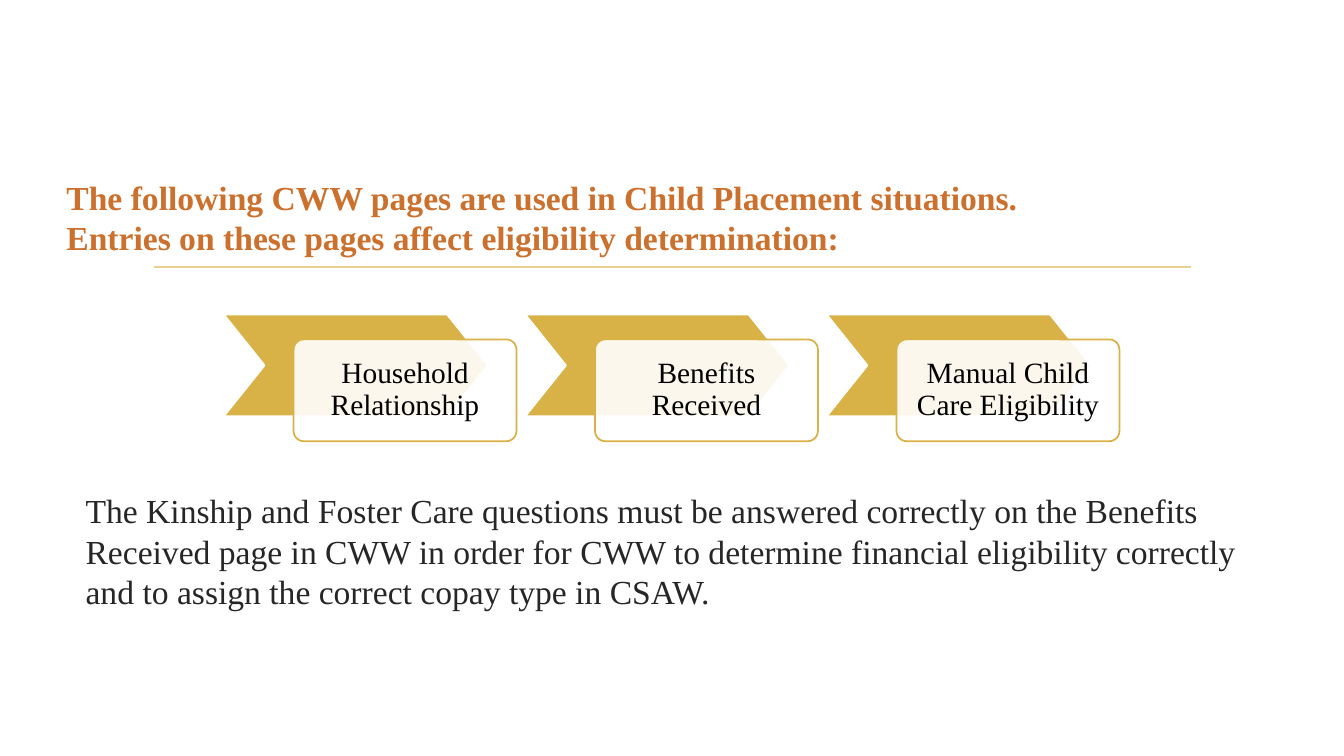
import pptx
import pptx.dml.color
import pptx.enum.shapes
import pptx.enum.text
import pptx.oxml
import pptx.oxml.ns
import pptx.util

PRESETS = pptx.enum.shapes.MSO_SHAPE
ALIGN = pptx.enum.text.PP_ALIGN
ANCHOR = pptx.enum.text.MSO_ANCHOR


def colour(hex_string):
    return pptx.dml.color.RGBColor.from_string(hex_string)


class PlacementSlide:
    font = "Times New Roman"
    gold = "D9B247"
    pale_gold = "E8D191"
    orange = "CC702D"
    white = "FFFFFF"
    black = "000000"
    charcoal = "262626"
    line_width = pptx.util.Pt(1.25)
    columns = 100
    rows = 100

    def __init__(self, deck):
        self.deck = deck
        self.slide = deck.slides.add_slide(deck.slide_layouts[6])

    def place(self, column, row):
        return (round(self.deck.slide_width * column / self.columns),
                round(self.deck.slide_height * row / self.rows))

    def rule(self, start, end, row):
        rule = self.slide.shapes.add_connector(
            pptx.enum.shapes.MSO_CONNECTOR.STRAIGHT,
            *self.place(start, row), *self.place(end, row))
        rule.line.color.rgb = colour(self.pale_gold)
        rule.line.width = self.line_width
        properties = rule._element.spPr
        properties.append(pptx.oxml.parse_xml(
            "<a:effectLst %s/>" % pptx.oxml.ns.nsdecls("a")))

    def panel(self, preset, column, row, width, height, corner, fill, outline, opacity=100):
        panel = self.slide.shapes.add_shape(
            preset, *self.place(column, row), *self.place(width, height))
        panel.shadow.inherit = False
        panel.adjustments[0] = corner
        panel.fill.solid()
        panel.fill.fore_color.rgb = colour(fill)
        panel.line.color.rgb = colour(outline)
        panel.line.width = self.line_width
        if opacity < 100:
            tint = panel._element.spPr.find(".//" + pptx.oxml.ns.qn("a:srgbClr"))
            tint.append(pptx.oxml.parse_xml('<a:alpha %s val="%d"/>' % (
                pptx.oxml.ns.nsdecls("a"), opacity * 1000)))
        return panel

    def fill_text(self, frame, lines, size, ink, bold=False, align=ALIGN.LEFT,
                  anchor=ANCHOR.MIDDLE, spacing=None):
        frame.word_wrap = True
        frame.vertical_anchor = anchor
        paragraph = frame.paragraphs[0]
        paragraph.alignment = align
        paragraph.line_spacing = spacing
        for index, line in enumerate(lines):
            if index:
                paragraph.add_line_break()
            run = paragraph.add_run()
            run.text = line
            run.font.name = self.font
            run.font.size = pptx.util.Pt(size)
            run.font.bold = bold
            run.font.color.rgb = colour(ink)

    def text(self, column, row, width, height, lines, size, ink, **style):
        box = self.slide.shapes.add_textbox(
            *self.place(column, row), *self.place(width, height))
        self.fill_text(box.text_frame, lines, size, ink, **style)

    def step(self, column, row, label):
        self.panel(PRESETS.CHEVRON, column, row, 19.65, 13.47, 0.4,
                   self.gold, self.white)
        card = self.panel(PRESETS.ROUNDED_RECTANGLE, column + 5.2, row + 3.3,
                          16.58, 13.47, 0.1, self.white, self.gold, opacity=90)
        frame = card.text_frame
        frame.margin_left = frame.margin_right = pptx.util.Inches(0.16)
        frame.margin_top = frame.margin_bottom = pptx.util.Inches(0.16)
        self.fill_text(frame, [label], 21, self.black, align=ALIGN.CENTER, spacing=0.9)


def main():
    deck = pptx.Presentation()
    deck.slide_width = pptx.util.Inches(13.33)
    deck.slide_height = pptx.util.Inches(7.5)
    page = PlacementSlide(deck)

    page.rule(11.48, 88.6, 35.33)
    pages = ["Household Relationship", "Benefits Received", "Manual Child Care Eligibility"]
    for index, label in enumerate(pages):
        page.step(16.65 + 22.43 * index, 41.6, label)

    page.text(4.2, 22, 90.25, 13.33, [
        "The following CWW pages are used in Child Placement situations.",
        "Entries on these pages affect eligibility determination:",
    ], 24, page.orange, bold=True)
    page.text(5.63, 64.2, 88.75, 26.5, [
        "The Kinship and Foster Care questions must be answered correctly on the "
        "Benefits Received page in CWW in order for CWW to determine financial "
        "eligibility correctly and to assign the correct copay type in CSAW.",
    ], 24, page.charcoal, anchor=ANCHOR.TOP)
    deck.save("out.pptx")


if __name__ == "__main__":
    main()
